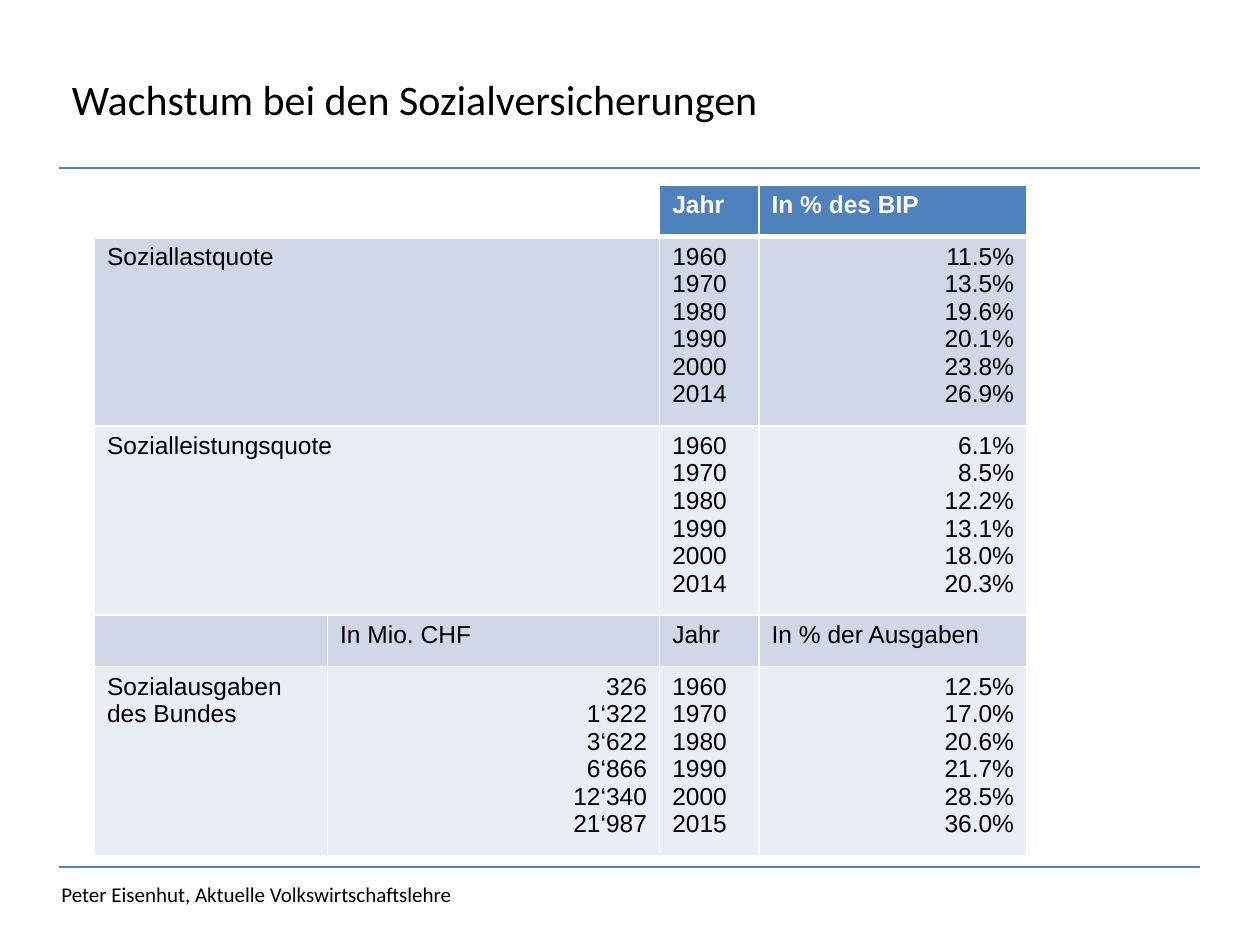
from dataclasses import dataclass

from lxml.etree import SubElement
from pptx import Presentation
from pptx.dml.color import RGBColor as RGB
from pptx.enum.shapes import MSO_CONNECTOR as CONN
from pptx.enum.text import MSO_ANCHOR as ANCHOR, PP_ALIGN as ALIGN
from pptx.oxml.ns import qn
from pptx.util import Pt


@dataclass(frozen=True)
class Theme:
    accent: str = "4F81BD"
    band_dark: str = "D0D8E8"
    band_light: str = "E9EDF4"
    white: str = "FFFFFF"
    black: str = "000000"
    heading_font: str = "Calibri"
    table_font: str = "Arial"
    title_size: float = 24
    footer_size: float = 12
    table_size: float = 14
    rule_width: float = 1.25
    border: float = 1
    header_border: float = 3


@dataclass(frozen=True)
class Label:
    text: str
    left: float
    top: float
    width: float
    height: float
    size: float
    anchor: ANCHOR


@dataclass(frozen=True)
class Row:
    cells: tuple[str, ...]
    fill: str
    merged: bool = False
    header: bool = False


T = Theme()
RULE_LEFT, RULE_RIGHT = 34, 686
RULE_TOPS = (96, 495.5)
TABLE_LEFT, TABLE_TOP, TABLE_HEIGHT = 54, 105.8, 382.3
COL_WIDTHS = (133.2, 189.8, 56.8, 153)
ROW_HEIGHT = 29.5
YEARS = "1960 1970 1980 1990 2000 "

LABELS = (
    Label("Peter Eisenhut, Aktuelle Volkswirtschaftslehre",
          28, 500.4, 433.4, 21.8, T.footer_size, ANCHOR.TOP),
    Label("Wachstum bei den Sozialversicherungen",
          34, 11.5, 568, 90, T.title_size, ANCHOR.MIDDLE),
)


def lines(values: str) -> str:
    return "\n".join(values.split())


ROWS = (
    Row(("", "", "Jahr", "In % des BIP"), T.accent, merged=True, header=True),
    Row(("Soziallastquote", "", lines(YEARS + "2014"),
         lines("11.5% 13.5% 19.6% 20.1% 23.8% 26.9%")), T.band_dark, merged=True),
    Row(("Sozialleistungsquote", "", lines(YEARS + "2014"),
         lines("6.1% 8.5% 12.2% 13.1% 18.0% 20.3%")), T.band_light, merged=True),
    Row(("", "In Mio. CHF", "Jahr", "In % der Ausgaben"), T.band_dark),
    Row(("Sozialausgaben\ndes Bundes",
         lines("326 1‘322 3‘622 6‘866 12‘340 21‘987"),
         lines(YEARS + "2015"),
         lines("12.5% 17.0% 20.6% 21.7% 28.5% 36.0%")), T.band_light),
)


def add_run(p, text: str, font: str, size: float, color: str, bold: bool = False) -> None:
    r = p.add_run()
    r.text = text
    r.font.name = font
    r.font.size = Pt(size)
    r.font.bold = bold
    r.font.color.rgb = RGB.from_string(color)


def add_rule(s, top: float) -> None:
    sp = s.shapes.add_connector(
        CONN.STRAIGHT, Pt(RULE_LEFT), Pt(top), Pt(RULE_RIGHT), Pt(top))
    sp.line.color.rgb = RGB.from_string(T.accent)
    sp.line.width = Pt(T.rule_width)
    SubElement(sp._element.spPr, qn("a:effectLst"))


def add_label(s, label: Label) -> None:
    sp = s.shapes.add_textbox(
        Pt(label.left), Pt(label.top), Pt(label.width), Pt(label.height))
    tf = sp.text_frame
    tf.word_wrap = True
    tf.vertical_anchor = label.anchor
    add_run(tf.paragraphs[0], label.text, T.heading_font, label.size, T.black)


def set_borders(cell, top: float, bottom: float) -> None:
    tc_pr = cell._tc.get_or_add_tcPr()
    widths = {"a:lnL": T.border, "a:lnR": T.border, "a:lnT": top, "a:lnB": bottom}
    for tag, width in widths.items():
        ln = SubElement(tc_pr, qn(tag), w=str(Pt(width)))
        SubElement(SubElement(ln, qn("a:solidFill")), qn("a:srgbClr"), val=T.white)


def fill_cell(cell, text: str, fill: str, header: bool, numeric: bool) -> None:
    cell.fill.solid()
    cell.fill.fore_color.rgb = RGB.from_string(fill)
    if not text:
        return
    tf = cell.text_frame
    for i, line in enumerate(text.split("\n")):
        p = tf.add_paragraph() if i else tf.paragraphs[0]
        p.alignment = ALIGN.RIGHT if numeric else ALIGN.LEFT
        add_run(p, line, T.table_font, T.table_size,
                T.white if header else T.black, header)


def add_ratio_table(s, rows: tuple[Row, ...]) -> None:
    sp = s.shapes.add_table(
        len(rows), len(COL_WIDTHS), Pt(TABLE_LEFT), Pt(TABLE_TOP),
        Pt(sum(COL_WIDTHS)), Pt(TABLE_HEIGHT))
    table = sp.table
    for column, width in zip(table.columns, COL_WIDTHS):
        column.width = Pt(width)
    for i, row in enumerate(rows):
        table.rows[i].height = Pt(ROW_HEIGHT)
        if row.merged:
            table.cell(i, 0).merge(table.cell(i, 1))
        top = T.header_border if i and rows[i - 1].header else T.border
        bottom = T.header_border if row.header else T.border
        for j, text in enumerate(row.cells):
            cell = table.cell(i, j)
            set_borders(cell, top, bottom)
            fill = T.white if row.header and not text else row.fill
            numeric = j in (1, 3) and "\n" in text
            fill_cell(cell, text, fill, row.header, numeric)
    sp.height = Pt(TABLE_HEIGHT)


def main() -> None:
    prs = Presentation()
    prs.slide_width, prs.slide_height = Pt(720), Pt(540)
    s = prs.slides.add_slide(prs.slide_layouts[6])
    for top in RULE_TOPS:
        add_rule(s, top)
    for label in LABELS:
        add_label(s, label)
    add_ratio_table(s, ROWS)
    prs.save("out.pptx")


if __name__ == "__main__":
    main()
